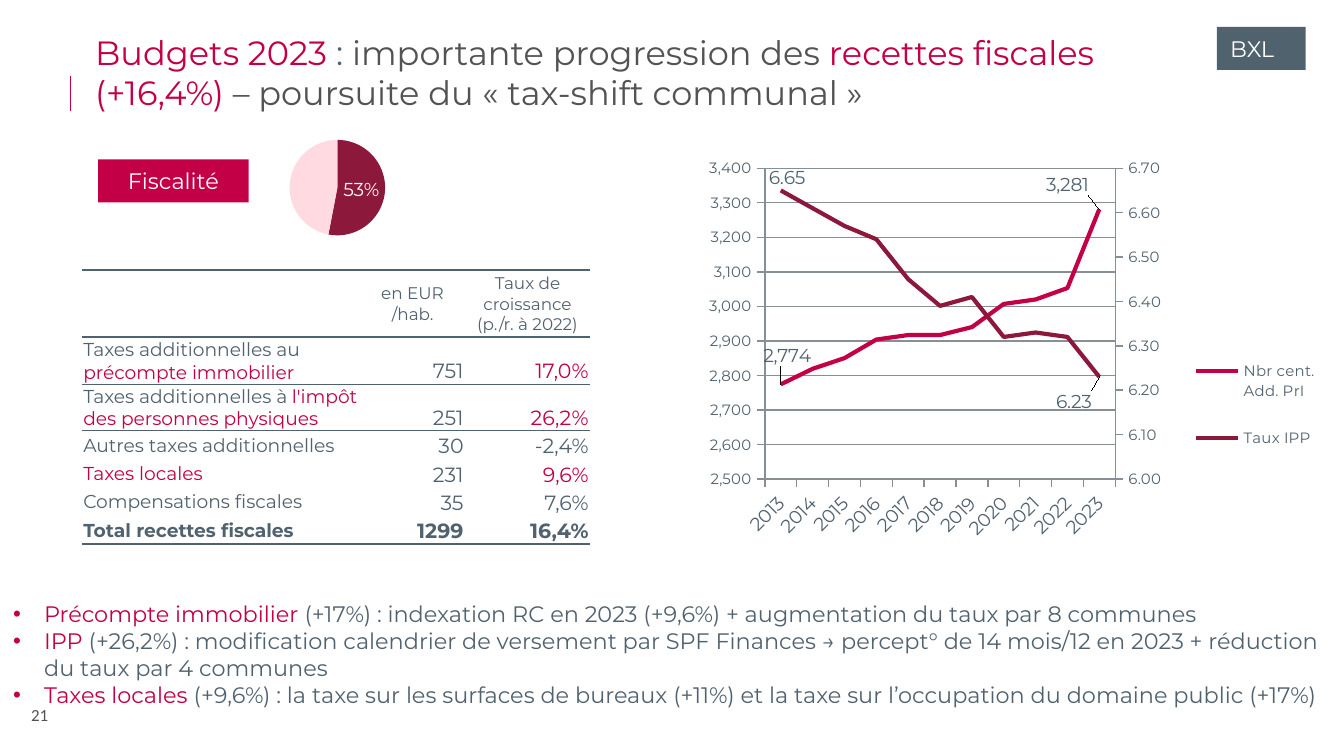
"""Build the slide on 2023 tax revenues: table, rate chart, share pie and comments."""
from copy import deepcopy

from lxml import etree
from pptx import Presentation
from pptx import util as u
from pptx.chart.data import CategoryChartData
from pptx.dml.color import RGBColor
from pptx.enum import chart as charts, shapes, text
from pptx.oxml import parse_xml
from pptx.oxml.ns import nsdecls, qn

FONT = "Montserrat"
RED, SLATE, GREY, WINE, PINK, WHITE = "C30045", "51626F", "535353", "8C193C", "FFDAE1", "FFFFFF"
LEFT, CENTER, RIGHT = text.PP_ALIGN.LEFT, text.PP_ALIGN.CENTER, text.PP_ALIGN.RIGHT
TOP, MIDDLE, BOTTOM = text.MSO_ANCHOR.TOP, text.MSO_ANCHOR.MIDDLE, text.MSO_ANCHOR.BOTTOM
WIDTH = u.Inches(10)
HEIGHT = WIDTH * 9 // 16
NO_STYLE = "{2D5ABB26-0587-4C30-8999-92F81FD0307C}"

PLACES = {
    "rule": (5.25, 10.1, 0, 4.6), "number": (1.2, 92.5, 3.5, 4.1),
    "title": (6.1, 3.35, 82.4, 9.8), "region": (90.55, 3.55, 6.6, 5.7),
    "topic": (7.3, 21.1, 11.2, 5.7), "pie": (18.55, 16.2, 16.6, 17.8),
    "table": (6.1, 35.7, 37.8, 36.3), "rates": (51.7, 19.6, 47.4, 53.4),
    "comments": (0, 77.9, 100.9, 17.3),
}
TITLE = [("Budgets 2023 ", RED), (": ", SLATE), ("importante progression des ", GREY),
         ("recettes fiscales (+16,4%) ", RED), ("– poursuite du « tax-shift communal »", GREY)]
COMMENTS = [
    [("Précompte immobilier ", RED),
     ("(+17%) : indexation RC en 2023 (+9,6%) + augmentation du taux par 8 communes", SLATE)],
    [("IPP", RED),
     (" (+26,2%) : modification calendrier de versement par SPF Finances → percept° de "
      "14 mois/12 en 2023 + réduction du taux par 4 communes", SLATE)],
    [("Taxes locales ", RED),
     ("(+9,6%) : la taxe sur les surfaces de bureaux (+11%) et la taxe sur l’occupation "
      "du domaine public (+17%)", SLATE)],
]
COLUMNS = [20.7, 7.8, 9.3]
ROWS = [8.9, 6.2, 6.2, 3.75, 3.75, 3.75, 3.75]
HEADERS = ["", "en EUR /hab.", "Taux de croissance (p./r. à 2022)"]
TAXES = [
    ([("Taxes additionnelles au ", SLATE), ("précompte immobilier", RED)], "751", "17,0%", RED),
    ([("Taxes additionnelles à ", SLATE), ("l'impôt des personnes physiques", RED)],
     "251", "26,2%", RED),
    ([("Autres taxes additionnelles", SLATE)], "30", "-2,4%", SLATE),
    ([("Taxes locales", RED)], "231", "9,6%", RED),
    ([("Compensations fiscales", SLATE)], "35", "7,6%", SLATE),
    ([("Total recettes fiscales", SLATE)], "1299", "16,4%", SLATE),
]
BORDERS = {0: {"T": 1, "B": 1}, 1: {"T": 1, "B": 0.5}, 2: {"T": 0.5}, 6: {"B": 1}}
YEARS = [str(year) for year in range(2013, 2024)]
ABOVE, BELOW = charts.XL_LABEL_POSITION.ABOVE, charts.XL_LABEL_POSITION.BELOW
RATES = [
    {"name": "Nbr cent. Add. PrI", "color": RED, "format": "#,##0",
     "values": [2774, 2819, 2850, 2904, 2917, 2917, 2940, 3007, 3020, 3053, 3281],
     "labels": {0: (ABOVE, 0.01, -0.03), 10: (ABOVE, -0.05, -0.02)}},
    {"name": "Taux IPP", "color": WINE, "format": "0.00",
     "values": [6.65, 6.61, 6.57, 6.54, 6.45, 6.39, 6.41, 6.32, 6.33, 6.32, 6.23],
     "labels": {0: (ABOVE, 0.01, 0.01), 10: (BELOW, -0.04, 0.02)}},
]


def color(value):
    return RGBColor.from_string(value)


def place(name):
    x, y, width, height = PLACES[name]
    return [int(share * side / 100) for share, side in
            ((x, WIDTH), (y, HEIGHT), (width, WIDTH), (height, HEIGHT))]


def write(paragraph, runs, size, align=LEFT, bold=False, font=FONT):
    paragraph.alignment = align
    for words, tint in runs:
        run = paragraph.add_run()
        run.text = words
        run.font.name, run.font.size, run.font.bold = font, u.Pt(size), bold
        run.font.color.rgb = color(tint)


def add_text(slide, name, anchor=TOP):
    frame = slide.shapes.add_textbox(*place(name)).text_frame
    frame.word_wrap, frame.vertical_anchor = True, anchor
    return frame


def add_tag(slide, name, words, fill, align):
    shape = slide.shapes.add_shape(shapes.MSO_SHAPE.RECTANGLE, *place(name))
    shape.shadow.inherit = False
    shape.fill.solid()
    shape.fill.fore_color.rgb = color(fill)
    shape.line.fill.background()
    shape.text_frame.vertical_anchor = MIDDLE
    write(shape.text_frame.paragraphs[0], [(words, WHITE)], 12, align)


def add_comments(slide):
    frame = add_text(slide, "comments", MIDDLE)
    for index, runs in enumerate(COMMENTS):
        paragraph = frame.add_paragraph() if index else frame.paragraphs[0]
        properties = paragraph._p.get_or_add_pPr()
        properties.set("marL", str(u.Inches(0.23)))
        properties.set("indent", str(-u.Inches(0.23)))
        tint = etree.SubElement(properties, qn("a:buClr"))
        etree.SubElement(tint, qn("a:srgbClr"), val=RED)
        etree.SubElement(properties, qn("a:buFont"), typeface="Arial")
        etree.SubElement(properties, qn("a:buChar"), char="•")
        write(paragraph, runs, 12)


def add_tax_table(slide):
    table = slide.shapes.add_table(len(ROWS), len(COLUMNS), *place("table")).table
    table.first_row = table.horz_banding = False
    table._tbl.tblPr.find(qn("a:tableStyleId")).text = NO_STYLE
    for column, share in zip(table.columns, COLUMNS):
        column.width = int(share * WIDTH / 100)
    for row, share in zip(table.rows, ROWS):
        row.height = int(share * HEIGHT / 100)
    grid = [[([(words, SLATE)] if words else [], 9, CENTER, MIDDLE) for words in HEADERS]]
    for label, amount, growth, tint in TAXES:
        grid.append([(label, 10, LEFT, MIDDLE), ([(amount, SLATE)], 11, RIGHT, BOTTOM),
                     ([(growth, tint)], 11, RIGHT, BOTTOM)])
    for r, line in enumerate(grid):
        for c, (runs, size, align, anchor) in enumerate(line):
            cell = table.cell(r, c)
            cell.margin_left = cell.margin_right = cell.margin_top = u.Inches(0.01)
            cell.margin_bottom = 0
            cell.vertical_anchor = anchor
            cell.fill.background()
            write(cell.text_frame.paragraphs[0], runs, size, align, r == len(TAXES))
            for position, (side, width) in enumerate(BORDERS.get(r, {}).items()):
                cell._tc.get_or_add_tcPr().insert(position, parse_xml(
                    f'<a:ln{side} {nsdecls("a")} w="{int(u.Pt(width))}"><a:solidFill>'
                    f'<a:srgbClr val="{SLATE}"/></a:solidFill></a:ln{side}>'))


def layout(x, y, width=None, height=None, inner=False):
    """Return a manual layout in shares of the chart; without a size it is an offset."""
    fields = [("layoutTarget", "inner")] if inner else []
    if width:
        fields += [("xMode", "edge"), ("yMode", "edge")]
    fields += [(key, value) for key, value in zip("xywh", (x, y, width, height))
               if value is not None]
    body = "".join(f'<c:{key} val="{value}"/>' for key, value in fields)
    return parse_xml(f'<c:layout {nsdecls("c")}><c:manualLayout>{body}</c:manualLayout></c:layout>')


def add_chart(slide, name, kind, data, plot_layout):
    chart = slide.shapes.add_chart(kind, *place(name), data).chart
    chart.has_title = False
    chart.font.name, chart.font.size, chart.font.color.rgb = FONT, u.Pt(10), color(SLATE)
    area = chart._chartSpace.chart.plotArea
    for old in area.findall(qn("c:layout")):
        area.remove(old)
    area.insert(0, layout(*plot_layout, inner=True))
    return chart


def add_pie(slide):
    data = CategoryChartData()
    data.categories = ["1", "2"]
    data.add_series("Series 1", [53, 47])
    chart = add_chart(slide, "pie", charts.XL_CHART_TYPE.PIE, data, (0.18, 0.13, 0.43, 0.71))
    chart.has_legend = False
    series = chart.plots[0].series[0]
    for index, tint in enumerate((WINE, PINK)):
        fill = series.points[index].format.fill
        fill.solid()
        fill.fore_color.rgb = color(tint)
    labels = series.data_labels
    labels.show_percentage, labels.show_value = True, False
    labels.number_format, labels.number_format_is_linked = "0%", False
    labels.position = charts.XL_LABEL_POSITION.CENTER
    labels.font.size, labels.font.name, labels.font.color.rgb = u.Pt(10), FONT, color(WHITE)
    hidden = parse_xml(f'<c:dLbl {nsdecls("c")}><c:idx val="1"/><c:delete val="1"/></c:dLbl>')
    labels._element.insert(0, hidden)


def style_rate(series, rate):
    series.smooth = False
    series.format.line.width, series.format.line.color.rgb = u.Pt(2.25), color(rate["color"])
    series.marker.style = charts.XL_MARKER_STYLE.NONE
    labels = series.data_labels
    labels.show_value = False
    for index, (position, x, y) in rate["labels"].items():
        series.points[index].data_label.position = position
        labels._element.findall(qn("c:dLbl"))[-1].insert(1, layout(x, y))
    labels._element.append(parse_xml(
        f'<c:extLst {nsdecls("c")}><c:ext uri="{{CE6537A1-D6FC-4f65-9D91-7224C49458BB}}" '
        'xmlns:c15="http://schemas.microsoft.com/office/drawing/2012/chart">'
        '<c15:showLeaderLines val="1"/></c:ext></c:extLst>'))


def style_axis(axis, low, high, step, number_format):
    axis.minimum_scale, axis.maximum_scale, axis.major_unit = low, high, step
    axis.tick_labels.number_format = number_format
    axis.tick_labels.number_format_is_linked = False


def add_right_axis(chart):
    """Move the second line to its own value axis on the right."""
    area = chart._chartSpace.chart.plotArea
    left = area.find(qn("c:lineChart"))
    right = deepcopy(left)
    left.remove(left.findall(qn("c:ser"))[1])
    right.remove(right.findall(qn("c:ser"))[0])
    left.addnext(right)
    originals = [area.find(qn("c:catAx")), area.find(qn("c:valAx"))]
    category, value = [deepcopy(axis) for axis in originals]
    ids = {axis.find(qn("c:axId")).get("val"): str(901 + n) for n, axis in enumerate(originals)}
    originals[1].addnext(value)
    value.addnext(category)
    for part in (right, category, value):
        for node in part.findall(qn("c:axId")) + part.findall(qn("c:crossAx")):
            node.set("val", ids[node.get("val")])
    category.find(qn("c:delete")).set("val", "1")
    value.remove(value.find(qn("c:majorGridlines")))
    value.find(qn("c:axPos")).set("val", "r")
    value.find(qn("c:crosses")).set("val", "max")
    scaling = value.find(qn("c:scaling"))
    for key, amount in (("max", 6.7), ("min", 6)):
        scaling.find(qn(f"c:{key}")).set("val", str(amount))
    value.find(qn("c:majorUnit")).set("val", "0.1")
    value.find(qn("c:numFmt")).set("formatCode", "0.00")


def add_rates(slide):
    data = CategoryChartData()
    data.categories = YEARS
    for rate in RATES:
        data.add_series(rate["name"], rate["values"], rate["format"])
    chart = add_chart(slide, "rates", charts.XL_CHART_TYPE.LINE, data, (0.11, 0.05, 0.55, 0.77))
    chart.plots[0].vary_by_categories = False
    for series, rate in zip(chart.plots[0].series, RATES):
        style_rate(series, rate)
    chart.has_legend = True
    chart.legend.position = charts.XL_LEGEND_POSITION.RIGHT
    chart.legend.include_in_layout = False
    chart.legend.font.size = u.Pt(8)
    legend = chart.legend._element
    for old in legend.findall(qn("c:layout")):
        legend.remove(old)
    legend.find(qn("c:legendPos")).addnext(layout(0.77, 0.46, 0.22, 0.35))
    style_axis(chart.value_axis, 2500, 3400, 100, "#,##0")
    chart.value_axis.tick_labels.font.size = u.Pt(8)
    chart.value_axis.major_gridlines.format.line.color.rgb = color("868E96")
    for axis in (chart.category_axis, chart.value_axis):
        axis.major_tick_mark = charts.XL_TICK_MARK.OUTSIDE
        axis.format.line.color.rgb = color("868E96")
    chart.category_axis.tick_labels.font.size = u.Pt(10)
    chart.category_axis._element.find(qn("c:txPr")).find(qn("a:bodyPr")).set("rot", "-2700000")
    add_right_axis(chart)


def main():
    presentation = Presentation()
    presentation.slide_width, presentation.slide_height = WIDTH, HEIGHT
    slide = presentation.slides.add_slide(presentation.slide_layouts[6])
    x, y, width, height = place("rule")
    rule = slide.shapes.add_connector(shapes.MSO_CONNECTOR.STRAIGHT, x, y, x + width, y + height)
    rule.line.width, rule.line.color.rgb = u.Pt(0.75), color(RED)
    etree.SubElement(rule._element.spPr, qn("a:effectLst"))
    number = add_text(slide, "number")
    number.margin_left = number.margin_right = u.Inches(0.04)
    number.margin_top = number.margin_bottom = u.Inches(0.04)
    write(number.paragraphs[0], [("21", GREY)], 9.1, CENTER, font="Calibri")
    add_comments(slide)
    write(add_text(slide, "title").paragraphs[0], TITLE, 18)
    add_tag(slide, "region", "BXL", SLATE, LEFT)
    add_tax_table(slide)
    add_rates(slide)
    add_tag(slide, "topic", "Fiscalité", RED, CENTER)
    add_pie(slide)
    presentation.save("out.pptx")


if __name__ == "__main__":
    main()
